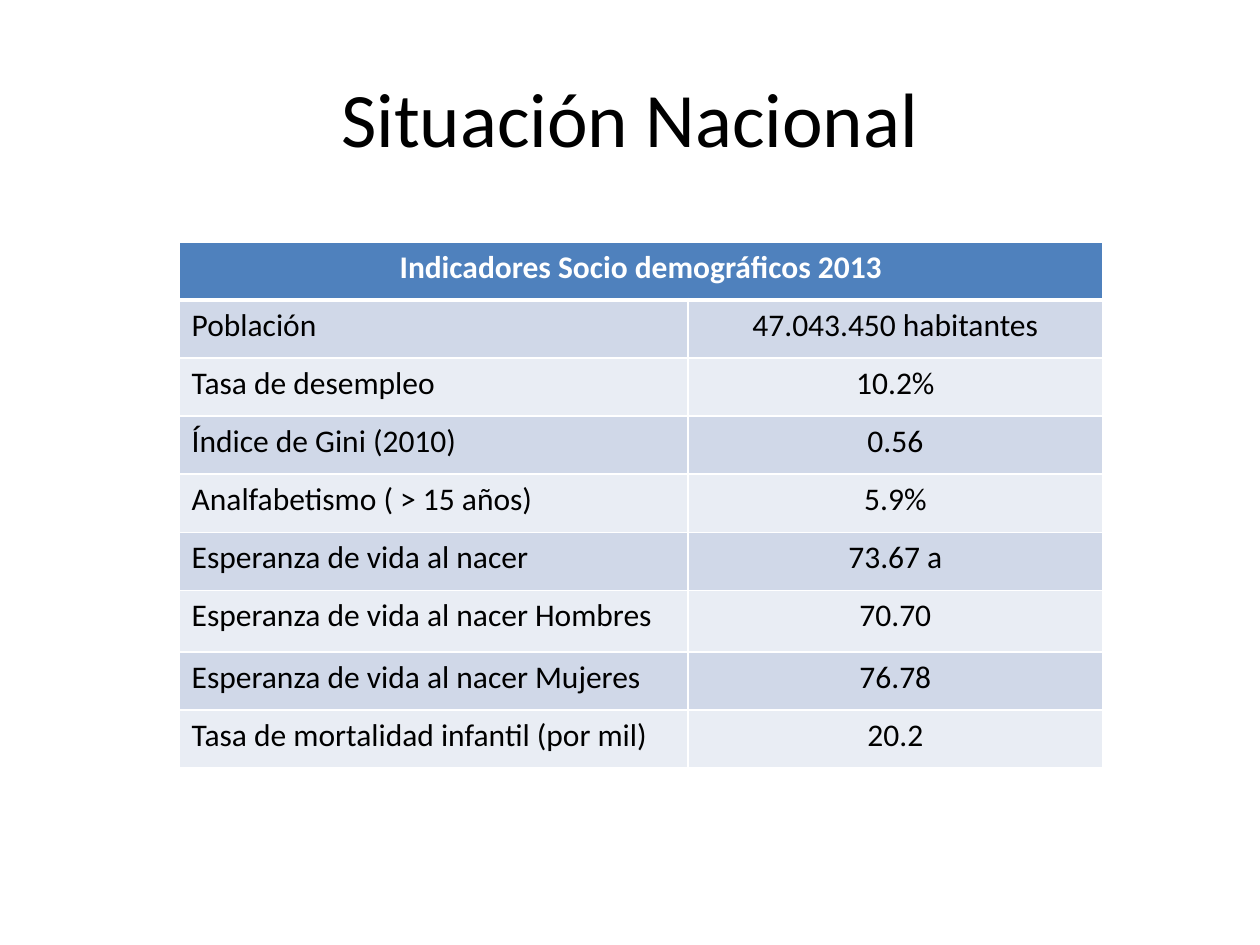
from lxml.etree import SubElement
from pptx import Presentation
from pptx.dml.color import RGBColor
from pptx.enum.text import MSO_ANCHOR as Anchor, PP_ALIGN as Align
from pptx.oxml.ns import qn
from pptx.util import Cm, Pt

BLACK = RGBColor(0x00, 0x00, 0x00)
WHITE = RGBColor(0xFF, 0xFF, 0xFF)
BLUE = RGBColor(0x4F, 0x81, 0xBD)
BAND_DARK = RGBColor(0xD0, 0xD8, 0xE8)
BAND_LIGHT = RGBColor(0xE9, 0xED, 0xF4)

HEADING = "Indicadores Socio demográficos 2013"
INDICATORS = [
    ("Población", "47.043.450 habitantes"),
    ("Tasa de desempleo", "10.2%"),
    ("Índice de Gini (2010)", "0.56"),
    ("Analfabetismo ( > 15 años)", "5.9%"),
    ("Esperanza de vida al nacer", "73.67 a"),
    ("Esperanza de vida al nacer Hombres", "70.70"),
    ("Esperanza de vida al nacer Mujeres", "76.78"),
    ("Tasa de mortalidad infantil (por mil)", "20.2"),
]
COLUMN_WIDTHS = [10.26, 8.36]
ROW_HEIGHTS = [1.17] * 6 + [1.24] + [1.17] * 2


def write(tf, text, size=18, font="Calibri", color=BLACK, bold=False, align=Align.LEFT):
    p = tf.paragraphs[0]
    p.alignment = align
    r = p.add_run()
    r.text = text
    r.font.size = Pt(size)
    r.font.name = font
    r.font.bold = bold
    r.font.color.rgb = color


class SlideBuilder:
    def __init__(self, prs, border=WHITE):
        self.s = prs.slides.add_slide(prs.slide_layouts[5])
        self.border = border

    def title(self, text, left, top, width, height):
        sp = self.s.shapes.title
        sp.left, sp.top, sp.width, sp.height = Cm(left), Cm(top), Cm(width), Cm(height)
        sp.text_frame.vertical_anchor = Anchor.MIDDLE
        write(sp.text_frame, text, size=44, align=Align.CENTER)

    def borders(self, cell, top=1, bottom=1):
        tc_pr = cell._tc.get_or_add_tcPr()
        for side, width in (("L", 1), ("R", 1), ("T", top), ("B", bottom)):
            ln = SubElement(tc_pr, qn(f"a:ln{side}"), w=str(Pt(width)))
            fill = SubElement(ln, qn("a:solidFill"))
            SubElement(fill, qn("a:srgbClr"), val=str(self.border))

    def cell(self, cell, text, fill, top=1, bottom=1, **style):
        self.borders(cell, top, bottom)
        cell.fill.solid()
        cell.fill.fore_color.rgb = fill
        if text:
            write(cell.text_frame, text, **style)

    def table(self, heading, rows, left, top, widths, heights):
        table = self.s.shapes.add_table(
            len(heights), len(widths), Cm(left), Cm(top),
            Cm(sum(widths)), Cm(sum(heights))).table
        for column, width in zip(table.columns, widths):
            column.width = Cm(width)
        for row, height in zip(table.rows, heights):
            row.height = Cm(height)
        table.cell(0, 0).merge(table.cell(0, len(widths) - 1))
        for j in range(len(widths)):
            self.cell(table.cell(0, j), "" if j else heading, BLUE, bottom=3,
                      color=WHITE, bold=True, align=Align.CENTER)
        for i, row in enumerate(rows, 1):
            for j, text in enumerate(row):
                self.cell(table.cell(i, j), text, BAND_DARK if i % 2 else BAND_LIGHT,
                          top=3 if i == 1 else 1,
                          align=Align.CENTER if j else Align.LEFT)


def main():
    prs = Presentation()
    prs.slide_width, prs.slide_height = Cm(25.4), Cm(19.05)
    slide = SlideBuilder(prs)
    slide.title("Situación Nacional", 1.27, 0.76, 22.86, 3.18)
    slide.table(HEADING, INDICATORS, 3.61, 4.88, COLUMN_WIDTHS, ROW_HEIGHTS)
    prs.save("out.pptx")


if __name__ == "__main__":
    main()
